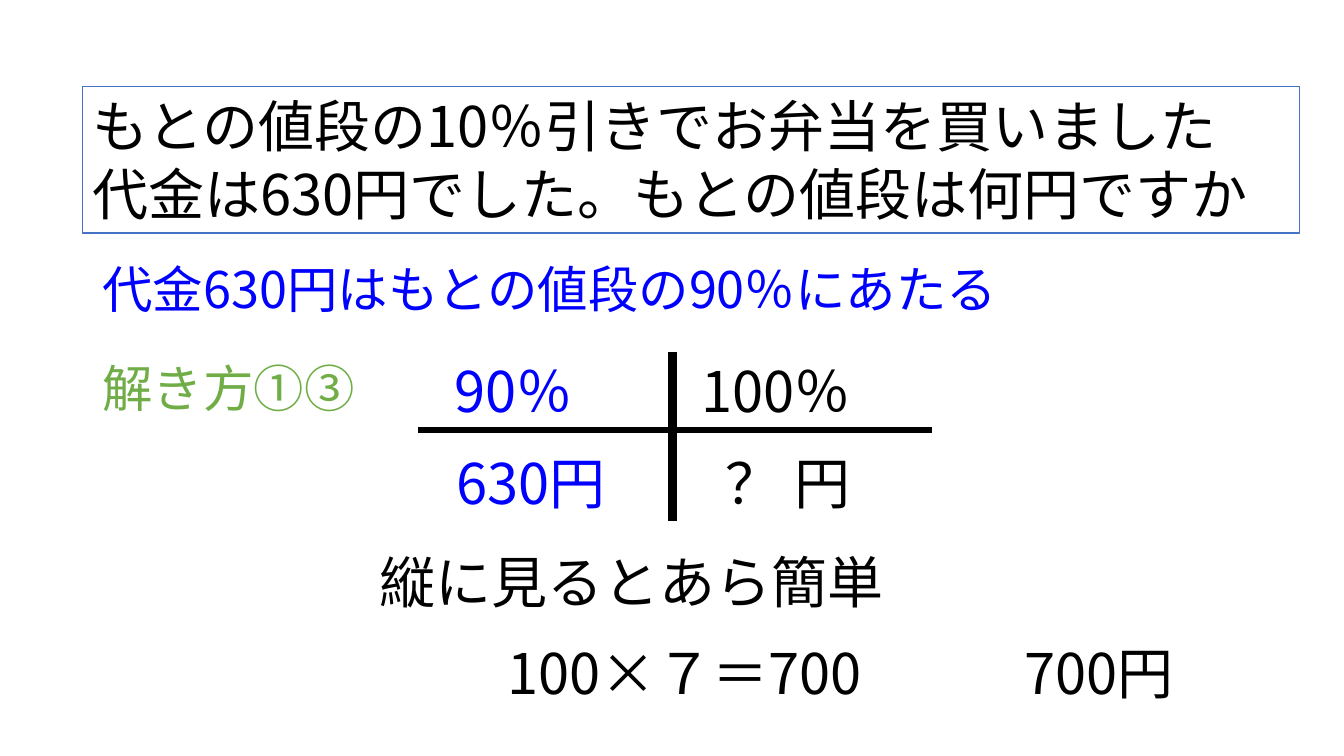
import pptx
import pptx.dml.color
import pptx.enum.shapes
import pptx.enum.text
import pptx.oxml.ns
import pptx.util
import lxml.etree

Pt = pptx.util.Pt
FONT = "Noto Sans CJK JP"
COLORS = {"black": "000000", "blue": "0000FF", "green": "70AD47", "border": "4472C4"}
FRAME_FORMAT = {
    "word_wrap": True,
    "auto_size": pptx.enum.text.MSO_AUTO_SIZE.SHAPE_TO_FIT_TEXT,
    "vertical_anchor": pptx.enum.text.MSO_ANCHOR.TOP,
    "margin_left": Pt(7.2),
    "margin_right": Pt(7.2),
    "margin_top": Pt(3.6),
    "margin_bottom": Pt(3.6),
}
PARAGRAPH_FORMAT = {
    "alignment": pptx.enum.text.PP_ALIGN.LEFT,
    "line_spacing": 1.0,
    "space_before": Pt(0),
}


def color(name):
    return pptx.dml.color.RGBColor.from_string(COLORS[name])


def set_attributes(target, values):
    for name, value in values.items():
        setattr(target, name, value)


def write_text(shape, lines, size, color_name):
    frame = shape.text_frame
    set_attributes(frame, FRAME_FORMAT)
    for index, line in enumerate(lines):
        paragraph = frame.add_paragraph() if index else frame.paragraphs[0]
        set_attributes(paragraph, PARAGRAPH_FORMAT)
        run = paragraph.add_run()
        run.text = line
        set_attributes(run.font, {"name": FONT, "size": Pt(size)})
        run.font.color.rgb = color(color_name)
        east_asian = lxml.etree.SubElement(run.font._element, pptx.oxml.ns.qn("a:ea"))
        east_asian.set("typeface", FONT)


def add_text(slide, box, text, size=40, color_name="black"):
    shape = slide.shapes.add_textbox(*map(Pt, box))
    write_text(shape, [text], size, color_name)
    return shape


def add_line(slide, start, end, width):
    line = slide.shapes.add_connector(
        pptx.enum.shapes.MSO_CONNECTOR.STRAIGHT, *map(Pt, start + end))
    line.line.color.rgb = color("black")
    line.line.width = Pt(width)
    lxml.etree.SubElement(line._element.spPr, pptx.oxml.ns.qn("a:effectLst"))


def add_problem(slide, box):
    title = slide.shapes.title
    set_attributes(title, dict(zip(("left", "top", "width", "height"), map(Pt, box))))
    title.line.color.rgb = color("border")
    title.line.width = Pt(0.75)
    lines = ["もとの値段の10％引きでお弁当を買いました",
             "代金は630円でした。もとの値段は何円ですか"]
    write_text(title, lines, 40, "black")


def add_hints(slide, box):
    left, top, width, height = box
    add_text(slide, box, "代金630円はもとの値段の90％にあたる", 36, "blue")
    add_text(slide, (left, top + 70.5, 198, height), "解き方①③", 36, "green")


def add_ratio_cross(slide, box):
    left, top, width, height = box
    middle = left + 181.5
    divider = top + 56
    add_line(slide, (left, divider), (left + width, divider), 4.5)
    entries = [
        ("90％", 18.7, 0, 132.5, "blue"),
        ("630円", 20.2, 65.5, 151.2, "blue"),
        ("100％", 195.1, 0, 151.2, "black"),
        ("？ 円", 212.4, 65.5, 117.4, "black"),
    ]
    for text, across, down, entry_width, color_name in entries:
        entry_box = (left + across, top + down, entry_width, 55.4)
        add_text(slide, entry_box, text, 40, color_name)
    add_line(slide, (middle, top), (middle, top + height), 6)


def add_solution(slide, box):
    left, top, width, height = box
    add_text(slide, (left, top, 381, 55.4), "縦に見るとあら簡単")
    answer = add_text(slide, (left + 91.5, top + 65.5, width - 91.5, 55.4),
                      "100×７＝700\t700円")
    properties = answer.text_frame.paragraphs[0]._p.get_or_add_pPr()
    tabs = lxml.etree.SubElement(properties, pptx.oxml.ns.qn("a:tabLst"))
    tab = lxml.etree.SubElement(tabs, pptx.oxml.ns.qn("a:tab"))
    tab.set("pos", str(Pt(369)))
    tab.set("algn", "l")


def main():
    presentation = pptx.Presentation()
    set_attributes(presentation, {"slide_width": Pt(960), "slide_height": Pt(540)})
    slide = presentation.slides.add_slide(presentation.slide_layouts.get_by_name("Title Only"))
    add_problem(slide, (59, 62, 869, 104.4))
    add_hints(slide, (66.2, 180.7, 702, 51))
    add_ratio_cross(slide, (298.8, 251.3, 367.2, 121))
    add_solution(slide, (264.2, 387.4, 612, 121))
    presentation.save("out.pptx")


if __name__ == "__main__":
    main()
